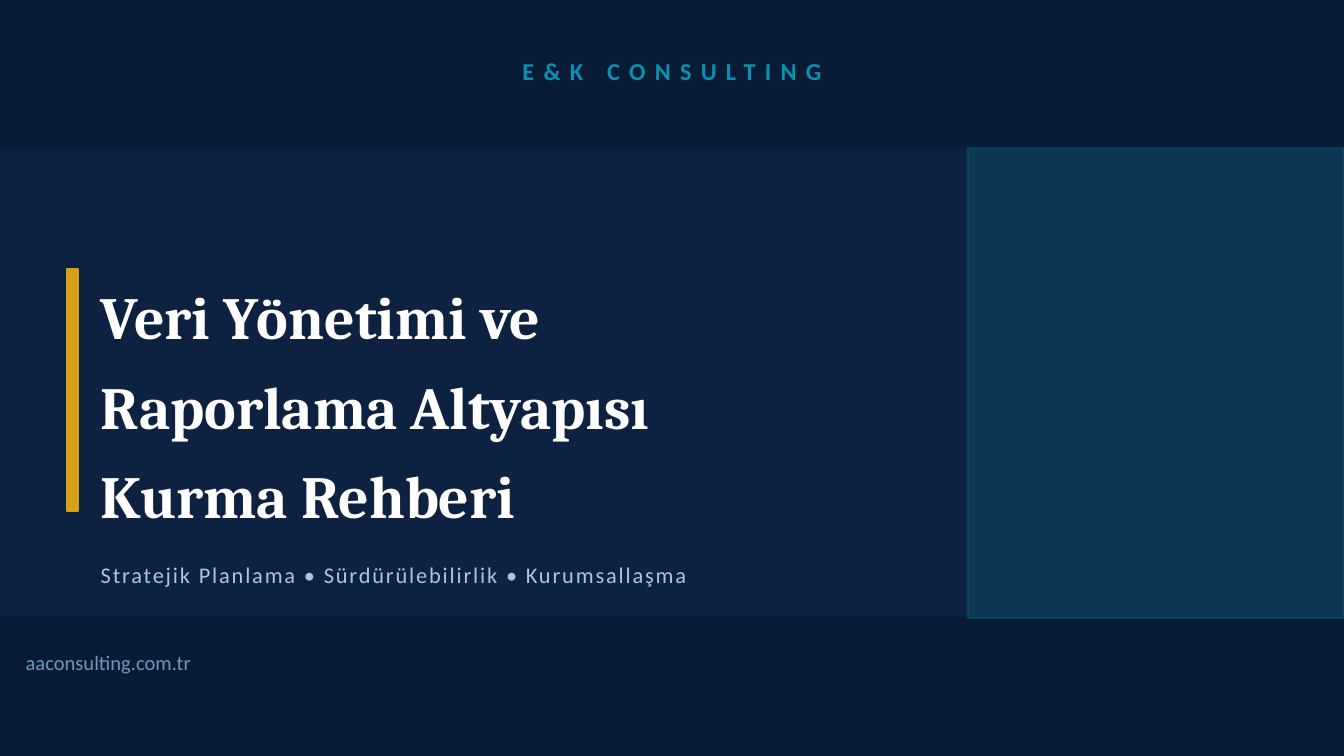
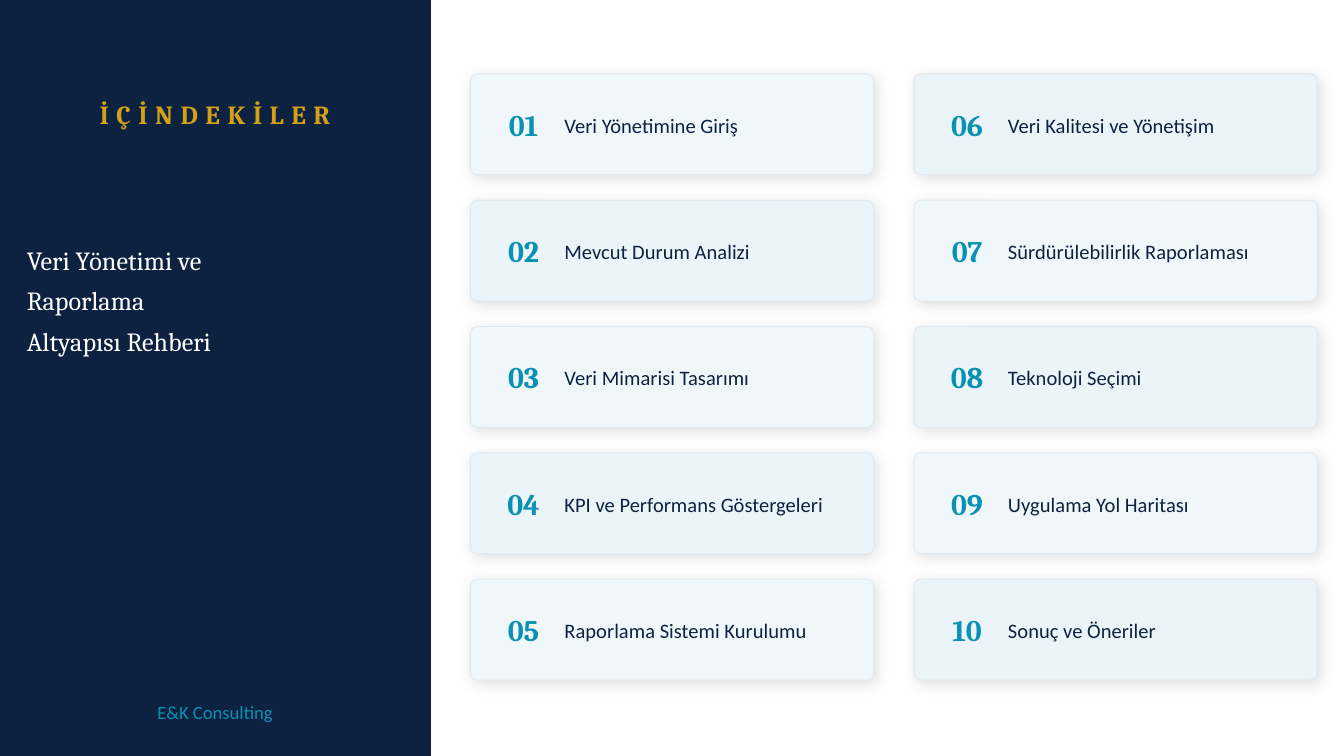
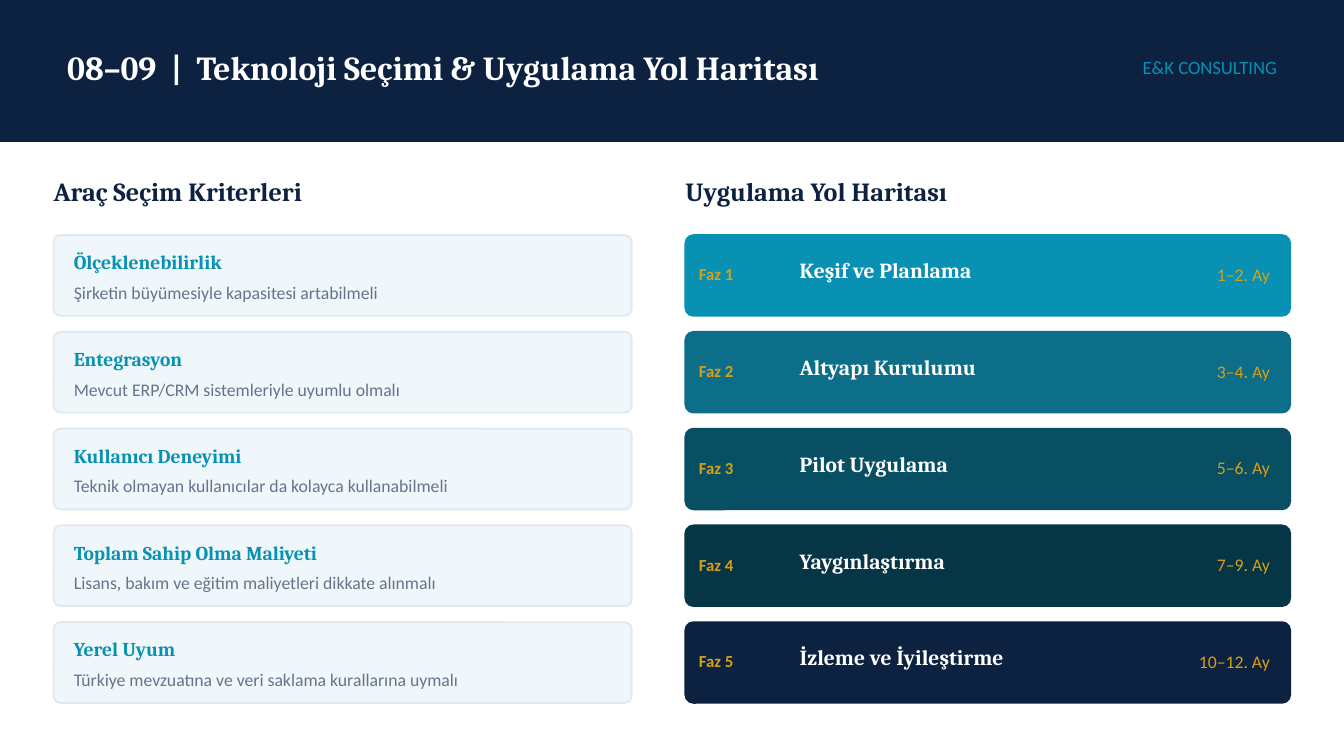
from dataclasses import dataclass

from lxml import etree
from pptx import Presentation, util as u
from pptx.dml.color import RGBColor
from pptx.enum import shapes, text
from pptx.oxml.ns import qn

# Shared style: square grid cells, 100 columns across a 16:9 slide
COLUMNS, ROWS = 100, 56.25
CELL = u.Inches(10) / COLUMNS

NAVY, DEEP, TEAL, GOLD = "0D2240", "0A1C35", "0891B2", "D4A017"
WHITE, ICE, MIST, EDGE, SLATE = "FFFFFF", "F0F7FA", "EBF4F8", "E2E8F0", "64748B"
SERIF, SANS = "Cambria", "Calibri"
FIRM = "E&K Consulting"

LEFT, CENTER, RIGHT = text.PP_ALIGN.LEFT, text.PP_ALIGN.CENTER, text.PP_ALIGN.RIGHT


@dataclass
class Type:
    font: str
    size: float
    color: str
    bold: bool = False
    tracking: int = 0
    leading: float = 1.0


def rgb(value):
    return RGBColor.from_string(value)


def grid(*cells):
    return [round(cell * CELL) for cell in cells]


class Deck:
    def __init__(self):
        self.deck = Presentation()
        self.deck.slide_width, self.deck.slide_height = grid(COLUMNS, ROWS)
        self.page = None

    def new_page(self, background=WHITE):
        self.page = self.deck.slides.add_slide(self.deck.slide_layouts[5])
        fill = self.page.background.fill
        fill.solid()
        fill.fore_color.rgb = rgb(background)

    def shape(self, kind, at, color, line=None, width=1):
        shape = self.page.shapes.add_shape(kind, *grid(*at))
        shape.shadow.inherit = False
        shape.fill.solid()
        shape.fill.fore_color.rgb = rgb(color)
        shape.line.color.rgb = rgb(line or color)
        shape.line.width = u.Pt(width)
        return shape

    def band(self, at, color):
        return self.shape(shapes.MSO_SHAPE.RECTANGLE, at, color)

    def glass(self, at, color, opacities):
        """Band with see-through fill and line."""
        band = self.band(at, color)
        for paint, percent in zip(band.element.spPr.iter(qn("a:srgbClr")), opacities):
            etree.SubElement(paint, qn("a:alpha"), val=str(percent * 1000))

    def card(self, at, color, line=None, width=1, radius=0.5):
        card = self.shape(shapes.MSO_SHAPE.ROUNDED_RECTANGLE, at, color, line, width)
        card.adjustments[0] = radius / at[3]
        return card

    def soft_shadow(self, card):
        effects = card.element.spPr.find(qn("a:effectLst"))
        shadow = etree.SubElement(
            effects, qn("a:outerShdw"), blurRad=str(u.Pt(8)), dist=str(u.Pt(2)),
            dir=str(45 * 60000), algn="bl", rotWithShape="0")
        paint = etree.SubElement(shadow, qn("a:srgbClr"), val="000000")
        etree.SubElement(paint, qn("a:alpha"), val="13000")

    def set_words(self, box, words, style, align):
        frame = box.text_frame
        frame.text = words
        frame.word_wrap = True
        frame.auto_size = text.MSO_AUTO_SIZE.NONE
        frame.vertical_anchor = text.MSO_ANCHOR.MIDDLE
        frame.margin_left = frame.margin_top = frame.margin_right = frame.margin_bottom = 0
        for para in frame.paragraphs:
            para.alignment = align
            para.line_spacing = style.leading
            for span in para.runs:
                span.font.name = style.font
                span.font.size = u.Pt(style.size)
                span.font.bold = style.bold
                span.font.color.rgb = rgb(style.color)
        for properties in box.element.iter(qn("a:rPr")):
            properties.set("spc", str(style.tracking * 100))

    def label(self, words, at, style, align=LEFT):
        self.set_words(self.page.shapes.add_textbox(*grid(*at)), words, style, align)

    def title(self, words, at, style, align=LEFT):
        title = self.page.shapes.title
        title.left, title.top, title.width, title.height = grid(*at)
        self.page.shapes.element.append(title.element)  # bring above the bands
        self.set_words(title, words, style, align)


def cover(deck):
    deck.new_page(NAVY)
    deck.band((0, 0, COLUMNS, 11), DEEP)
    deck.band((0, 46, COLUMNS, ROWS - 46), DEEP)
    deck.glass((72, 11, 28, 35), TEAL, (18, 25))
    deck.band((5, 20, 0.8, 18), GOLD)
    deck.label(FIRM.upper(), (0, 1.8, COLUMNS, 7),
               Type(SANS, 13, TEAL, bold=True, tracking=5), CENTER)
    deck.title("Veri Yönetimi ve\nRaporlama Altyapısı\nKurma Rehberi",
               (7.5, 15.5, 62, 28), Type(SERIF, 32, WHITE, bold=True, leading=1.25))
    deck.label("Stratejik Planlama • Sürdürülebilirlik • Kurumsallaşma",
               (7.5, 40.5, 80, 4.5), Type(SANS, 12, "A8C8D8", tracking=1))
    deck.label("aaconsulting.com.tr", (1.9, 46.8, 48.1, 5), Type(SANS, 11, "6B9AB8"))


def contents(deck):
    deck.new_page()

    # Side panel
    panel = 32
    deck.band((0, 0, panel, ROWS), NAVY)
    deck.title("İÇİNDEKİLER", (0, 5, panel, 7),
               Type(SERIF, 14, GOLD, bold=True, tracking=4), CENTER)
    deck.label("Veri Yönetimi ve\nRaporlama\nAltyapısı Rehberi", (2, 14, 28, 16),
               Type(SERIF, 14, WHITE, leading=1.3))
    deck.label(FIRM, (0, 51, panel, 4), Type(SANS, 10, TEAL), CENTER)

    # Chapter cards, filled column by column
    chapters = [
        "Veri Yönetimine Giriş", "Mevcut Durum Analizi", "Veri Mimarisi Tasarımı",
        "KPI ve Performans Göstergeleri", "Raporlama Sistemi Kurulumu",
        "Veri Kalitesi ve Yönetişim", "Sürdürülebilirlik Raporlaması",
        "Teknoloji Seçimi", "Uygulama Yol Haritası", "Sonuç ve Öneriler",
    ]
    number_type = Type(SERIF, 16, TEAL, bold=True)
    chapter_type = Type(SANS, 11, NAVY)
    for index, chapter in enumerate(chapters):
        column, row = divmod(index, 5)
        left, top = 35 + 33 * column, 5.5 + 9.4 * row
        card = deck.card((left, top, 30, 7.5), (ICE, MIST)[index % 2], EDGE, 0.5)
        deck.soft_shadow(card)
        deck.label(f"{index + 1:02}", (left + 1.2, top + 1, 5.5, 5.5), number_type, CENTER)
        deck.label(chapter, (left + 7, top + 1.3, 22, 5), chapter_type)


def roadmap(deck):
    deck.new_page()
    deck.band((0, 0, COLUMNS, 10.5), NAVY)
    deck.title("08–09  |  Teknoloji Seçimi & Uygulama Yol Haritası",
               (5, 1.5, 90, 7), Type(SERIF, 18, WHITE, bold=True))
    deck.label(FIRM.upper(), (0, 1.5, 95, 7), Type(SANS, 10, TEAL), RIGHT)

    heading = Type(SERIF, 14, NAVY, bold=True)
    first, pitch, height = 17.5, 7.2, 6

    # Selection criteria
    criteria = [
        ("Ölçeklenebilirlik", "Şirketin büyümesiyle kapasitesi artabilmeli"),
        ("Entegrasyon", "Mevcut ERP/CRM sistemleriyle uyumlu olmalı"),
        ("Kullanıcı Deneyimi", "Teknik olmayan kullanıcılar da kolayca kullanabilmeli"),
        ("Toplam Sahip Olma Maliyeti", "Lisans, bakım ve eğitim maliyetleri dikkate alınmalı"),
        ("Yerel Uyum", "Türkiye mevzuatına ve veri saklama kurallarına uymalı"),
    ]
    name_type = Type(SERIF, 10.5, TEAL, bold=True)
    detail_type = Type(SANS, 9.5, SLATE)
    deck.label("Araç Seçim Kriterleri", (4, 12, 44, 4.5), heading)
    for row, (name, detail) in enumerate(criteria):
        top = first + pitch * row
        deck.card((4, top, 43, height), ICE, EDGE)
        deck.label(name, (5.5, top + 0.5, 20, 3), name_type)
        deck.label(detail, (5.5, top + 3, 40, 2.5), detail_type)

    # Phases
    phases = [
        ("Keşif ve Planlama", "1–2. Ay", TEAL),
        ("Altyapı Kurulumu", "3–4. Ay", "0D6E8A"),
        ("Pilot Uygulama", "5–6. Ay", "094F64"),
        ("Yaygınlaştırma", "7–9. Ay", "063545"),
        ("İzleme ve İyileştirme", "10–12. Ay", NAVY),
    ]
    phase_type = Type(SANS, 9, GOLD, bold=True)
    step_type = Type(SERIF, 11.5, WHITE, bold=True)
    months_type = Type(SANS, 9.5, GOLD)
    deck.label("Uygulama Yol Haritası", (51, 12, 45, 4.5), heading)
    for row, (step, months, color) in enumerate(phases):
        top = first + pitch * row
        deck.card((51, top, 45, height), color, radius=0.6)
        deck.label(f"Faz {row + 1}", (52, top + 1, 7.5, 3.8), phase_type)
        deck.label(step, (59.5, top + 0.7, 25, 3.8), step_type)
        deck.label(months, (84.5, top + 1, 10, 3.8), months_type, RIGHT)


def main():
    deck = Deck()
    cover(deck)
    contents(deck)
    roadmap(deck)
    deck.deck.save("out.pptx")


if __name__ == "__main__":
    main()
